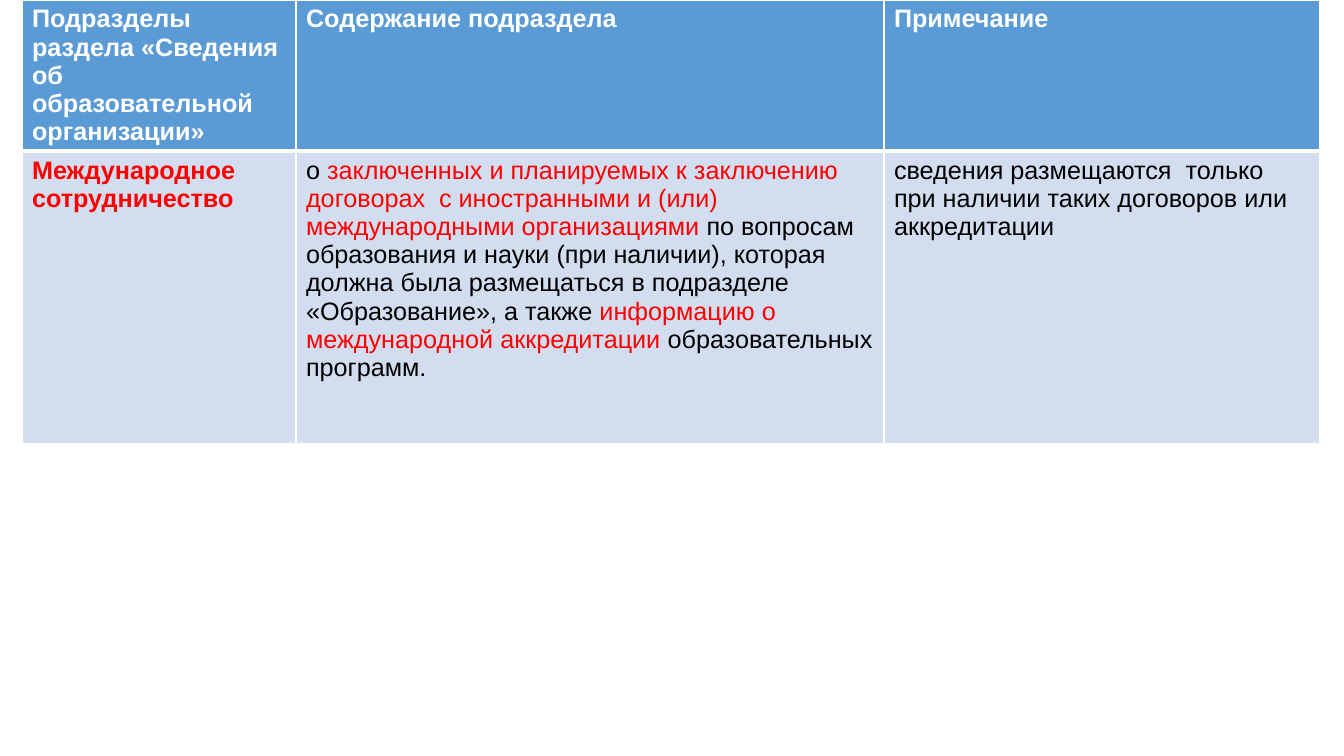
import pptx
import pptx.dml.color
import pptx.oxml.ns
import pptx.util
from lxml import etree

SCALE = 914400 / 100.8
FONT = "Arial"
SIZE = 18
COLORS = {
    "head": "5B9BD5",
    "body": "D2DEEF",
    "white": "FFFFFF",
    "red": "FF0000",
    "black": "000000",
}
WIDTHS = [274, 588, 436]
HEIGHTS = [151, 292]
HEADS = [
    "Подразделы раздела «Сведения об образовательной организации»",
    "Содержание подраздела",
    "Примечание",
]
TOPIC = "Международное сотрудничество"
CONTENT = [
    ("о ", "black"),
    ("заключенных и планируемых к заключению договорах  с иностранными "
     "и (или) международными организациями ", "red"),
    ("по вопросам образования и науки (при наличии), которая должна была "
     "размещаться в подразделе «Образование», а также ", "black"),
    ("информацию о международной аккредитации ", "red"),
    ("образовательных программ.", "black"),
]
NOTE = ("сведения размещаются  только при наличии таких договоров "
        "или аккредитации")


def px(count):
    return pptx.util.Emu(round(count * SCALE))


def color(name):
    return pptx.dml.color.RGBColor.from_string(COLORS[name])


def set_borders(cell, top, bottom):
    """Draw white cell borders; top and bottom widths are in points."""
    props = cell._tc.get_or_add_tcPr()
    sides = {"lnL": 1, "lnR": 1, "lnT": top, "lnB": bottom}
    for place, (side, width) in enumerate(sides.items()):
        line = etree.Element(pptx.oxml.ns.qn(f"a:{side}"),
                             w=str(pptx.util.Pt(width)))
        fill = etree.SubElement(line, pptx.oxml.ns.qn("a:solidFill"))
        etree.SubElement(fill, pptx.oxml.ns.qn("a:srgbClr"),
                         val=COLORS["white"])
        props.insert(place, line)


def fill_cell(cell, parts, fill, bold=False):
    """Write (text, colour name) parts as runs of one paragraph."""
    cell.fill.solid()
    cell.fill.fore_color.rgb = color(fill)
    para = cell.text_frame.paragraphs[0]
    for text, tint in parts:
        run = para.add_run()
        run.text = text
        run.font.name = FONT
        run.font.size = pptx.util.Pt(SIZE)
        run.font.bold = bold
        run.font.color.rgb = color(tint)


def add_grid(slide, left, top):
    frame = slide.shapes.add_table(
        len(HEIGHTS), len(WIDTHS), px(left), px(top),
        px(sum(WIDTHS)), px(sum(HEIGHTS)))
    table = frame.table
    for column, width in zip(table.columns, WIDTHS):
        column.width = px(width)
    for row, height in zip(table.rows, HEIGHTS):
        row.height = px(height)
    return table


def main():
    deck = pptx.Presentation()
    deck.slide_width = px(1344)
    deck.slide_height = px(756)
    slide = deck.slides.add_slide(deck.slide_layouts[6])
    table = add_grid(slide, 22, 0)

    for col, title in enumerate(HEADS):
        head = table.cell(0, col)
        fill_cell(head, [(title, "white")], "head", bold=True)
        set_borders(head, top=1, bottom=3)

    body = [[(TOPIC, "red")], CONTENT, [(NOTE, "black")]]
    for col, parts in enumerate(body):
        cell = table.cell(1, col)
        fill_cell(cell, parts, "body", bold=col == 0)
        set_borders(cell, top=3, bottom=1)

    deck.save("out.pptx")


if __name__ == "__main__":
    main()
